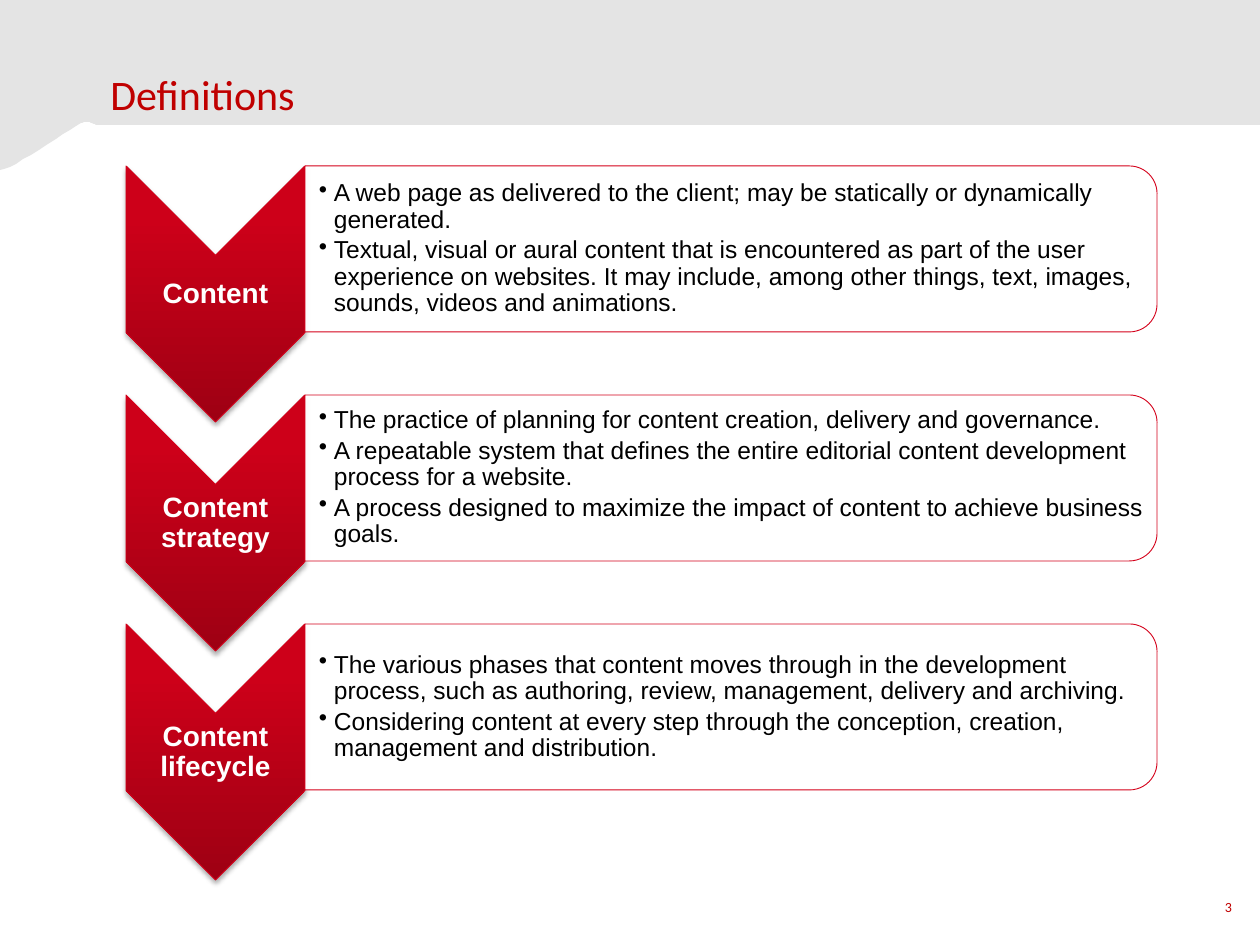
from lxml import etree
from pptx import Presentation
from pptx import util as u
from pptx.dml.color import RGBColor
from pptx.enum import shapes, text
from pptx.oxml import parse_xml
from pptx.oxml.ns import nsdecls, qn

EMU_PER_PX = 914400 / 126
RED, CRIMSON, GREY, WHITE, BLACK = "C00000", "D4001A", "E4E4E4", "FFFFFF", "000000"
GRADIENT = [(0, "9E0013"), (80, "CD0019"), (100, "CE0019")]

DEFINITIONS = [
    ("Content", [
        "A web page as delivered to the client; may be statically or dynamically generated.",
        "Textual, visual or aural content that is encountered as part of the user experience "
        "on websites. It may include, among other things, text, images, sounds, videos and "
        "animations.",
    ]),
    ("Content strategy", [
        "The practice of planning for content creation, delivery and governance.",
        "A repeatable system that defines the entire editorial content development process "
        "for a website.",
        "A process designed to maximize the impact of content to achieve business goals.",
    ]),
    ("Content lifecycle", [
        "The various phases that content moves through in the development process, such as "
        "authoring, review, management, delivery and archiving.",
        "Considering content at every step through the conception, creation, management and "
        "distribution.",
    ]),
]


def px(length):
    return u.Emu(round(length * EMU_PER_PX))


def colour(value):
    return RGBColor.from_string(value)


def curve(start, first, second, end, steps=12):
    """Points along a cubic curve, without its start."""
    points = []
    for step in range(1, steps + 1):
        t = step / steps
        weights = ((1 - t) ** 3, 3 * t * (1 - t) ** 2, 3 * t * t * (1 - t), t ** 3)
        points.append(tuple(
            sum(w * p for w, p in zip(weights, axis))
            for axis in zip(start, first, second, end)))
    return points


def add_bullet(para, indent):
    properties = para._p.get_or_add_pPr()
    properties.set("marL", str(px(indent)))
    properties.set("indent", str(-px(indent)))
    etree.SubElement(properties, qn("a:buChar")).set("char", "•")


def write(frame, lines, size, font="Arial", ink=BLACK, bold=False, align=None,
          spacing=None, after=None, bullet_indent=None):
    for index, line in enumerate(lines):
        para = frame.paragraphs[0] if index == 0 else frame.add_paragraph()
        if bullet_indent:
            add_bullet(para, bullet_indent)
        para.alignment = align
        para.line_spacing = spacing
        if after is not None:
            para.space_after = u.Pt(after)
        span = para.add_run()
        span.text = line
        span.font.name = font
        span.font.size = u.Pt(size)
        span.font.bold = bold
        span.font.color.rgb = colour(ink)


class Painter:
    """Holds the outline style and the current page."""

    def __init__(self, page, outline=CRIMSON, outline_width=0.5):
        self.page = page
        self.outline = outline
        self.outline_width = outline_width

    def banner(self, points):
        builder = self.page.shapes.build_freeform(*points[0], scale=EMU_PER_PX)
        builder.add_line_segments(points[1:], close=True)
        shape = builder.convert_to_shape()
        shape.shadow.inherit = False
        shape.fill.solid()
        shape.fill.fore_color.rgb = colour(GREY)
        shape.line.fill.background()

    def turned(self, kind, left, top, width, height):
        """A shape turned a quarter clockwise that covers the given area."""
        shift = (width - height) / 2
        shape = self.page.shapes.add_shape(
            kind, px(left + shift), px(top - shift), px(height), px(width))
        shape.rotation = 90
        shape.shadow.inherit = False
        shape.fill.solid()
        shape.fill.fore_color.rgb = colour(WHITE)
        shape.line.color.rgb = colour(self.outline)
        shape.line.width = u.Pt(self.outline_width)
        return shape

    def chevron(self, *area):
        properties = self.turned(shapes.MSO_SHAPE.CHEVRON, *area)._element.spPr
        stops = "".join(
            f'<a:gs pos="{place * 1000}"><a:srgbClr val="{value}"/></a:gs>'
            for place, value in GRADIENT)
        gradient = parse_xml(
            f'<a:gradFill {nsdecls("a")} rotWithShape="0"><a:gsLst>{stops}</a:gsLst>'
            '<a:lin ang="16200000" scaled="0"/></a:gradFill>')
        properties.replace(properties.find(qn("a:solidFill")), gradient)
        properties.find(qn("a:effectLst")).append(parse_xml(
            f'<a:outerShdw {nsdecls("a")} blurRad="{u.Pt(3.1)}" dist="{u.Pt(1.8)}" '
            f'dir="5400000" rotWithShape="0"><a:srgbClr val="{BLACK}">'
            '<a:alpha val="35000"/></a:srgbClr></a:outerShdw>'))

    def panel(self, *area):
        shape = self.turned(shapes.MSO_SHAPE.ROUND_2_SAME_RECTANGLE, *area)
        fill = shape._element.spPr.find(qn("a:solidFill"))
        etree.SubElement(fill[0], qn("a:alpha")).set("val", "90000")

    def label(self, left, top, width, height, lines, insets=None,
              anchor=text.MSO_ANCHOR.MIDDLE, **style):
        box = self.page.shapes.add_textbox(px(left), px(top), px(width), px(height))
        frame = box.text_frame
        frame.word_wrap = True
        frame.vertical_anchor = anchor
        if insets:
            (frame.margin_left, frame.margin_top,
             frame.margin_right, frame.margin_bottom) = map(px, insets)
        write(frame, lines, **style)


def main():
    deck = Presentation()
    deck.slide_width, deck.slide_height = px(1260), px(945)
    page = deck.slides.add_slide(deck.slide_layouts[6])
    painter = Painter(page)
    centre = text.PP_ALIGN.CENTER

    painter.banner([(0, 0), (1261, 0), (1261, 125), (96, 125)]
                   + curve((96, 125), (91, 122), (86, 121), (81, 123))
                   + curve((81, 123), (64, 132), (14, 169), (0, 170)))
    painter.label(98, 5, 1097, 120, ["Definitions"], anchor=text.MSO_ANCHOR.BOTTOM,
                  size=24, font="Calibri", ink=RED)
    painter.label(1197, 882, 63, 50, ["3"], size=8, font="Calibri", ink=RED, align=centre)

    first_top, pitch = 166, 229
    for row, (term, meanings) in enumerate(DEFINITIONS):
        top = first_top + row * pitch
        painter.chevron(126, top, 179, 256)
        painter.label(126, top + 90, 179, 77, [term], insets=(1, 1, 1, 1),
                      size=16, ink=WHITE, bold=True, align=centre, spacing=0.9)
        painter.panel(305, top, 852, 166)
        painter.label(305, top + 8, 844, 150, meanings, insets=(14, 1, 1, 1),
                      size=14, spacing=0.9, after=2.3, bullet_indent=15)

    deck.save("out.pptx")


if __name__ == "__main__":
    main()
